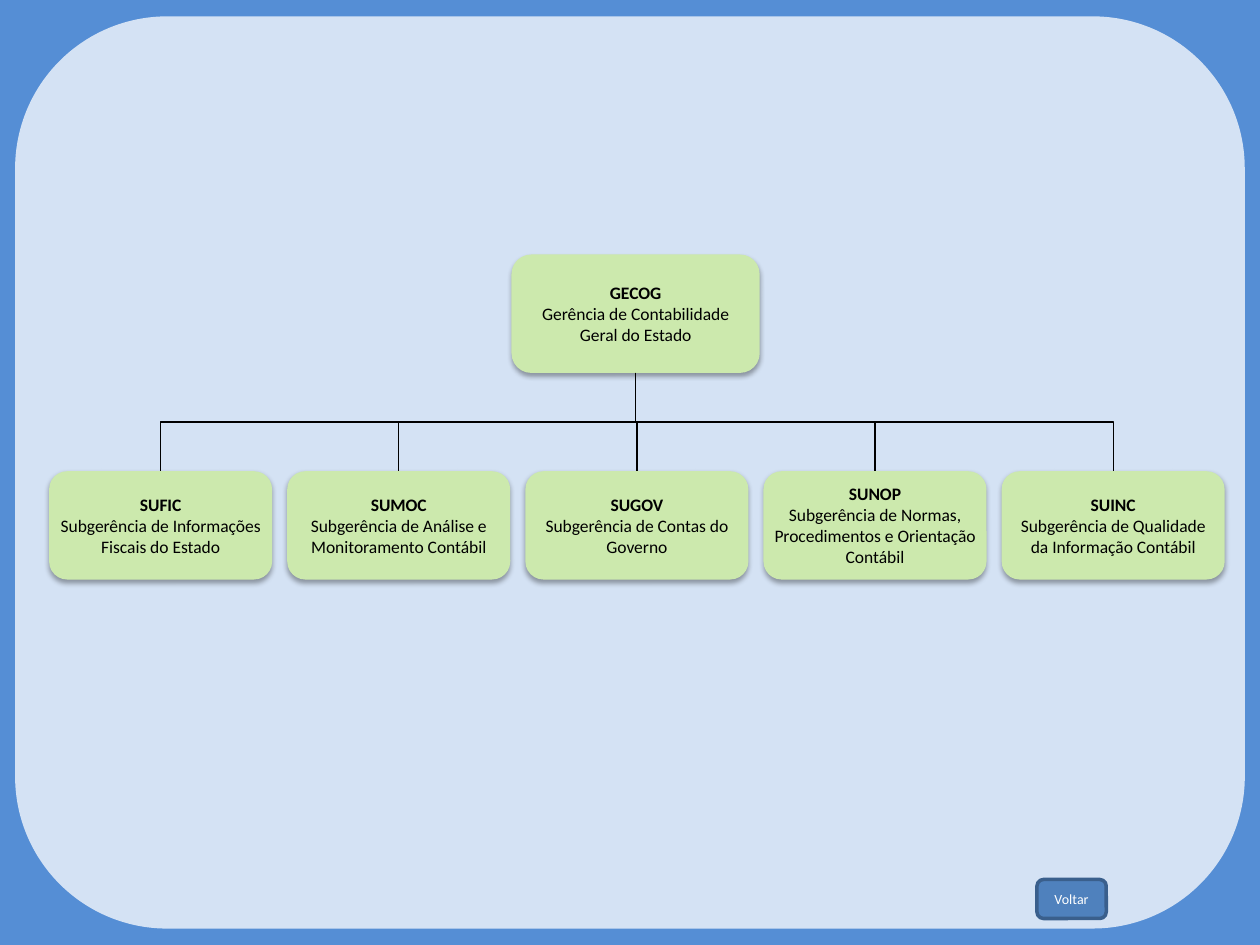
from lxml import etree
from pptx import Presentation
from pptx import util as u
from pptx.dml.color import RGBColor
from pptx.enum import shapes, text
from pptx.oxml.ns import qn

WIDTH, HEIGHT = 10, 7.5
FIRST_COLUMN, COLUMN_PITCH = 0.39, 1.89
UNIT_TOP, UNIT_WIDTH, UNIT_HEIGHT = 3.74, 1.77, 0.86

UNITS = [
    ("SUFIC", "Subgerência de Informações Fiscais do Estado"),
    ("SUMOC", "Subgerência de Análise e Monitoramento Contábil"),
    ("SUGOV", "Subgerência de Contas do Governo"),
    ("SUNOP", "Subgerência de Normas, Procedimentos e Orientação Contábil"),
    ("SUINC", "Subgerência de Qualidade da Informação Contábil"),
]


def rgb(value):
    return RGBColor.from_string(value)


class OrgChart:
    FONT = "Calibri"
    BACK, PANEL, BOX = "558ED5", "D4E2F4", "CCE9AD"
    BUTTON, BUTTON_EDGE = "4F81BD", "3A5F8C"
    INK, LIGHT = "000000", "FFFFFF"

    def __init__(self, slide):
        self.slide = slide
        slide.background.fill.solid()
        slide.background.fill.fore_color.rgb = rgb(self.BACK)

    def panel(self, left, top, width, height, fill, edge=None):
        sp = self.slide.shapes.add_shape(
            shapes.MSO_SHAPE.ROUNDED_RECTANGLE,
            *(u.Inches(v) for v in (left, top, width, height)))
        sp.shadow.inherit = False
        sp.fill.solid()
        sp.fill.fore_color.rgb = rgb(fill)
        if edge:
            sp.line.color.rgb = rgb(edge)
            sp.line.width = u.Pt(2)
        else:
            sp.line.fill.background()
        return sp

    def label(self, sp, lines, size, color):
        tf = sp.text_frame
        tf.word_wrap = True
        tf.vertical_anchor = text.MSO_ANCHOR.MIDDLE
        tf.text = "\n".join(lines)
        for p in tf.paragraphs:
            p.alignment = text.PP_ALIGN.CENTER
            p.font.name = self.FONT
            p.font.size = u.Pt(size)
            p.font.color.rgb = rgb(color)
        return tf

    def box(self, left, top, width, height, code, name, inset=None):
        sp = self.panel(left, top, width, height, self.BOX)
        self.cast_shadow(sp)
        tf = self.label(sp, (code, name), 10, self.INK)
        tf.paragraphs[0].font.bold = True
        if inset is not None:
            tf.margin_left = tf.margin_right = u.Inches(inset)
            tf.margin_top = tf.margin_bottom = u.Inches(inset)
        return sp

    def button(self, left, top, width, height, caption):
        sp = self.panel(left, top, width, height, self.BUTTON, self.BUTTON_EDGE)
        self.label(sp, [caption], 8, self.LIGHT)

    def cast_shadow(self, sp):
        effects = sp._element.spPr.find(qn("a:effectLst"))
        shadow = etree.SubElement(
            effects, qn("a:outerShdw"), blurRad=str(u.Pt(3.1)),
            dist=str(u.Pt(1.8)), dir="5400000", rotWithShape="0")
        color = etree.SubElement(shadow, qn("a:srgbClr"), val=self.INK)
        etree.SubElement(color, qn("a:alpha"), val="35000")

    def branch(self, parent, child):
        """Elbow that leaves the parent downwards: a quarter turn of the usual one."""
        c = self.slide.shapes.add_connector(
            shapes.MSO_CONNECTOR.ELBOW, 0, 0, 0, 0)
        c.begin_connect(parent, 2)
        c.end_connect(child, 0)
        c.line.color.rgb = rgb(self.INK)
        c.line.width = u.Pt(0.75)
        spread, drop = c.width, c.height
        center_x, center_y = c.left + spread // 2, c.top + drop // 2
        rightwards = c.end_x > c.begin_x
        c.left, c.top = center_x - drop // 2, center_y - spread // 2
        c.width, c.height = drop, spread
        xfrm = c._element.spPr.find(qn("a:xfrm"))
        xfrm.set("rot", "16200000" if rightwards else "5400000")
        xfrm.set("flipH", "1" if rightwards else "0")
        etree.SubElement(c._element.spPr, qn("a:effectLst"))


def main():
    prs = Presentation()
    prs.slide_width, prs.slide_height = u.Inches(WIDTH), u.Inches(HEIGHT)
    chart = OrgChart(prs.slides.add_slide(prs.slide_layouts[6]))
    chart.panel(0.12, 0.13, 9.76, 7.24, chart.PANEL)
    head = chart.box(4.06, 2.02, 1.97, 0.94, "GECOG",
                     "Gerência de Contabilidade Geral do Estado")
    for column, (code, name) in enumerate(UNITS):
        unit = chart.box(FIRST_COLUMN + column * COLUMN_PITCH, UNIT_TOP,
                         UNIT_WIDTH, UNIT_HEIGHT, code, name, inset=0.04)
        chart.branch(head, unit)
    chart.button(8.23, 6.98, 0.55, 0.31, "Voltar")
    prs.save("out.pptx")


if __name__ == "__main__":
    main()
